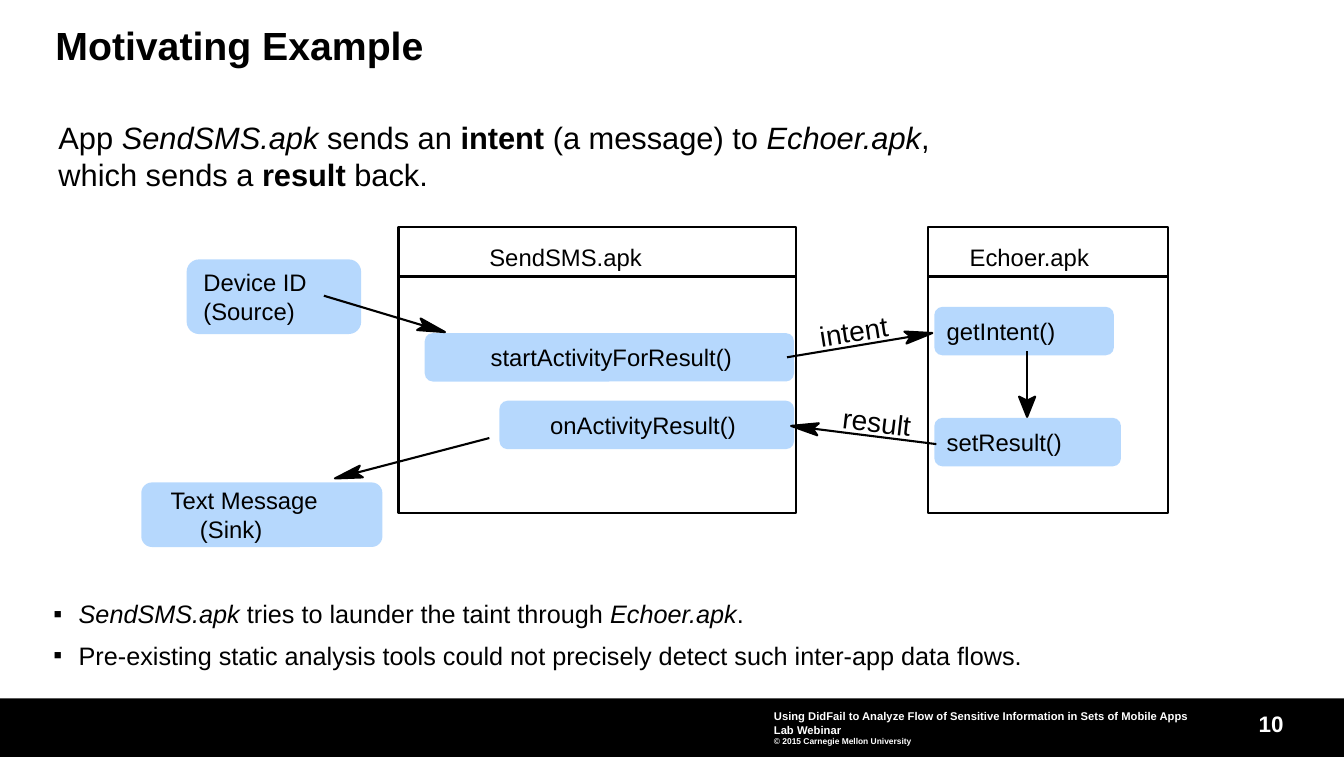
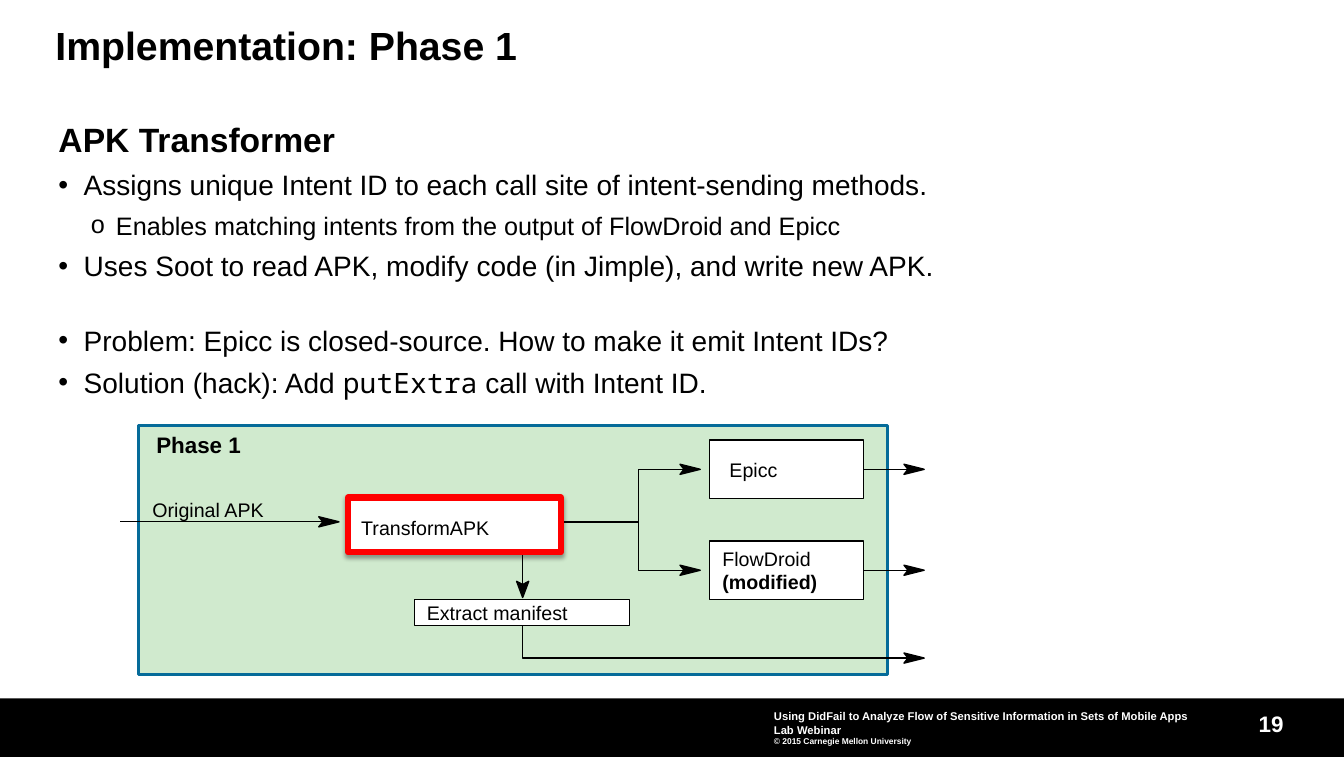
import math
from dataclasses import dataclass

from lxml import etree
from pptx import Presentation
from pptx import util as u
from pptx.dml.color import RGBColor
from pptx.enum import shapes, text
from pptx.oxml.ns import qn

PX = 9144  # EMU in one px, 100 px to the inch
WIDTH, HEIGHT = 1332, 750

BLACK = RGBColor(0x00, 0x00, 0x00)
WHITE = RGBColor(0xFF, 0xFF, 0xFF)
BLUE = RGBColor(0x6F, 0xB3, 0xFD)
GREEN = RGBColor(0xD0, 0xEA, 0xCE)
TEAL = RGBColor(0x05, 0x6B, 0x99)
RED = RGBColor(0xFF, 0x00, 0x00)

FONT, MONO = "Arial", "Noto Sans Mono"
RECT = shapes.MSO_SHAPE.RECTANGLE
ROUND = shapes.MSO_SHAPE.ROUNDED_RECTANGLE
TOP, MIDDLE = text.MSO_ANCHOR.TOP, text.MSO_ANCHOR.MIDDLE
LEFT, CENTER, RIGHT = text.PP_ALIGN.LEFT, text.PP_ALIGN.CENTER, text.PP_ALIGN.RIGHT


@dataclass
class Para:
    """Runs are plain strings or (string, style); a newline is a line break."""
    runs: list
    size: int
    bold: bool = False
    color: RGBColor = BLACK
    align: int = LEFT
    before: int = 0
    after: int = 0
    spacing: object = None
    bullet: str = ""
    indent: int = 0


class Deck:
    def __init__(self):
        self.prs = Presentation()
        self.prs.slide_width, self.prs.slide_height = WIDTH * PX, HEIGHT * PX
        self.slide = None

    # Shared frame: title, band, footer, page number
    def new_slide(self, title, number):
        self.slide = self.prs.slides.add_slide(self.prs.slide_layouts[6])
        self.box((0, 692, WIDTH, 58), fill=BLACK)
        self.text((1209, 712, 63, 18),
                  [Para([str(number)], 16, True, WHITE, RIGHT, spacing=u.Pt(13))],
                  anchor=MIDDLE)
        self.text((767, 698, 452, 47), [
            Para(["Using DidFail to Analyze Flow of Sensitive Information in Sets "
                  "of Mobile Apps\nLab Webinar"], 8, True, WHITE),
            Para(["© 2015 Carnegie Mellon University"], 6, True, WHITE),
        ], anchor=MIDDLE)
        self.text((55, 26, 1233, 43), [Para([title], 28, True, spacing=0.9)])

    def _write(self, frame, paras, anchor, insets, wrap):
        frame.word_wrap = wrap
        frame.vertical_anchor = anchor
        frame.margin_left, frame.margin_top = insets[0] * PX, insets[1] * PX
        frame.margin_right = frame.margin_bottom = 0
        for index, para in enumerate(paras):
            p = frame.add_paragraph() if index else frame.paragraphs[0]
            props = p._p.get_or_add_pPr()
            if para.indent:
                props.set("marL", str(para.indent * PX))
            if para.bullet:
                props.set("indent", str(-25 * PX))
                etree.SubElement(props, qn("a:buFont")).set("typeface", FONT)
                etree.SubElement(props, qn("a:buChar")).set("char", para.bullet)
            p.alignment = para.align
            p.space_before, p.space_after = u.Pt(para.before), u.Pt(para.after)
            if para.spacing:
                p.line_spacing = para.spacing
            p.font.name, p.font.size = FONT, u.Pt(para.size)
            p.font.bold, p.font.color.rgb = para.bold, para.color
            for run in para.runs:
                words, style = (run, "") if isinstance(run, str) else run
                for line, part in enumerate(words.split("\n")):
                    if line:
                        p.add_line_break()
                    r = p.add_run()
                    r.text = part
                    if style == "bold":
                        r.font.bold = True
                    elif style == "italic":
                        r.font.italic = True
                    elif style == "mono":
                        r.font.name = MONO

    def text(self, at, paras, anchor=TOP, wrap=True, rotation=0):
        label = self.slide.shapes.add_textbox(*(v * PX for v in at))
        label.rotation = rotation
        self._write(label.text_frame, paras, anchor, (0, 0), wrap)

    def _paint(self, shape, fill, line, weight):
        shape.shadow.inherit = False
        if fill is None:
            shape.fill.background()
        else:
            shape.fill.solid()
            shape.fill.fore_color.rgb = fill
        if line is None:
            shape.line.fill.background()
        else:
            shape.line.color.rgb = line
            shape.line.width = u.Pt(weight)

    def box(self, at, paras=(), kind=RECT, fill=None, line=None, weight=1,
            insets=(0, 0), anchor=MIDDLE, alpha=100, shadow=False):
        shape = self.slide.shapes.add_shape(kind, *(v * PX for v in at))
        self._paint(shape, fill, line, weight)
        if alpha < 100:
            color = shape._element.spPr.find(".//" + qn("a:srgbClr"))
            etree.SubElement(color, qn("a:alpha")).set("val", str(alpha * 1000))
        if shadow:
            effects = shape._element.spPr.find(qn("a:effectLst"))
            outer = etree.SubElement(effects, qn("a:outerShdw"), blurRad="39370",
                                     dist="22860", dir="5400000", rotWithShape="0")
            color = etree.SubElement(outer, qn("a:srgbClr"), val="000000")
            etree.SubElement(color, qn("a:alpha"), val="35000")
        if paras:
            self._write(shape.text_frame, paras, anchor, insets, False)

    def outline(self, points, weight, closed):
        points = [(x * PX, y * PX) for x, y in points]
        builder = self.slide.shapes.build_freeform(*points[0], scale=1.0)
        builder.add_line_segments(points[1:], close=closed)
        self._paint(builder.convert_to_shape(), BLACK if closed else None, BLACK, weight)

    def arrow(self, points, weight, length, half):
        """Line through the points, with a notched head whose tip is the last one."""
        (x0, y0), (x1, y1) = points[-2:]
        span = math.hypot(x1 - x0, y1 - y0)
        dx, dy = (x1 - x0) / span, (y1 - y0) / span

        def behind(back, side):
            return x1 - back * dx - side * dy, y1 - back * dy + side * dx

        notch = behind(0.8 * length, 0)
        stem = points[:-1] + [notch]
        if len(stem) == 2:
            ends = [round(v * PX) for point in stem for v in point]
            line = self.slide.shapes.add_connector(shapes.MSO_CONNECTOR.STRAIGHT, *ends)
            line.line.color.rgb, line.line.width = BLACK, u.Pt(weight)
            etree.SubElement(line._element.spPr, qn("a:effectLst"))
        else:
            self.outline(stem, weight, False)
        self.outline([(x1, y1), behind(length, half), notch, behind(length, -half)],
                     weight, True)


def motivating_example(deck):
    deck.new_slide("Motivating Example", 10)
    sender, echoer = ("SendSMS.apk", "italic"), ("Echoer.apk", "italic")
    deck.text((58, 118, 1214, 80), [Para(
        ["App ", sender, " sends an ", ("intent", "bold"), " (a message) to ", echoer,
         ",\nwhich sends a ", ("result", "bold"), " back."], 22)])
    deck.text((53, 593, 1185, 95), [
        Para([sender, " tries to launder the taint through ", echoer, "."], 18,
             bullet="▪", indent=25),
        Para(["Pre-existing static analysis tools could not precisely detect such "
              "inter-app data flows."], 18, before=8, bullet="▪", indent=25),
    ])

    # Methods, source and sink: place, text inset, lines with their indents
    for at, inset, lines in [
        ((185, 257, 173, 74), 13, [("Device ID", 0), ("(Source)", 0)]),
        ((421, 330, 366, 48), 63, [("startActivityForResult()", 0)]),
        ((926, 304, 178, 48), 10, [("getIntent()", 0)]),
        ((926, 414, 185, 48), 10, [("setResult()", 0)]),
        ((495, 397, 292, 48), 48, [("onActivityResult()", 0)]),
        ((140, 478, 239, 64), 26, [("Text Message", 0), ("(Sink)", 29)]),
    ]:
        deck.box(at, [Para([words], 17, indent=indent) for words, indent in lines],
                 ROUND, BLUE, alpha=50, insets=(inset, 0))

    # Flow of the tainted data
    for start, tip in [((780, 354), (924, 330)), ((928, 440), (784, 422)),
                       ((321, 293), (441, 329)), ((485, 434), (332, 474))]:
        deck.arrow([start, tip], 1.5, 27, 6)
    deck.arrow([(1018, 348), (1018, 413)], 1.5, 20, 8)

    # The two apps: header above body
    for name, left, width, inset in [("Echoer.apk", 920, 238, 41),
                                     ("SendSMS.apk", 395, 394, 90)]:
        deck.box((left, 225, width, 49), [Para([name], 17)], line=BLACK, weight=1.5,
                 insets=(inset, 10))
        deck.box((left, 274, width, 234), line=BLACK, weight=1.5)

    for word, left, top, angle in [("intent", 800, 311, -8.9), ("result", 824, 401, 6.7)]:
        deck.text((left, top, 91, 27), [Para([word], 20, align=CENTER)], rotation=angle)


def implementation(deck):
    deck.new_slide("Implementation: Phase 1", 19)
    dot = dict(size=20, after=6, bullet="•", indent=25)
    deck.text((58, 118, 1214, 290), [
        Para(["APK Transformer"], 24, True, after=6),
        Para(["Assigns unique Intent ID to each call site of intent-sending methods."],
             **dot),
        Para(["Enables matching intents from the output of FlowDroid and Epicc"], 18,
             after=6, bullet="o", indent=57),
        Para(["Uses Soot to read APK, modify code (in Jimple), and write new APK."], **dot),
        Para(["Problem: Epicc is closed-source. How to make it emit Intent IDs?"],
             before=23, **dot),
        Para(["Solution (hack): Add ", ("putExtra", "mono"), " call with Intent ID."],
             **dot),
    ])

    # Phase panel and its input
    deck.box((137, 422, 743, 246), [Para(["Phase 1"], 16, True)], fill=GREEN, line=TEAL,
             weight=2, insets=(18, 5), anchor=TOP)
    deck.text((151, 493, 111, 24), [Para(["Original APK"], 14)], wrap=False)
    head = dict(weight=1, length=20, half=5)
    deck.arrow([(119, 517), (336, 517)], **head)

    # Analysers fed by the transformer, each with an output
    for top, inset, lines in [(436, 20, [("Epicc", False)]),
                              (536, 13, [("FlowDroid", False), ("(modified)", True)])]:
        middle = top + 29
        deck.box((703, top, 153, 58), [Para([words], 14, bold) for words, bold in lines],
                 fill=WHITE, line=BLACK, insets=(inset, 0))
        deck.arrow([(556, 517), (633, 517), (633, middle), (694, middle)], **head)
        deck.arrow([(856, middle), (916, middle)], **head)

    # Manifest branch
    deck.arrow([(518, 546), (518, 592)], weight=1, length=16, half=6)
    deck.box((411, 594, 213, 26), [Para(["Extract manifest"], 14)], fill=WHITE,
             line=BLACK, insets=(12, 0))
    deck.arrow([(518, 620), (518, 652), (916, 652)], **head)

    # Highlighted step
    deck.box((345, 493, 211, 54), [Para(["TransformAPK"], 14)], fill=WHITE, line=RED,
             weight=4.5, insets=(13, 5), shadow=True)


def main():
    deck = Deck()
    motivating_example(deck)
    implementation(deck)
    deck.prs.save("out.pptx")


if __name__ == "__main__":
    main()
